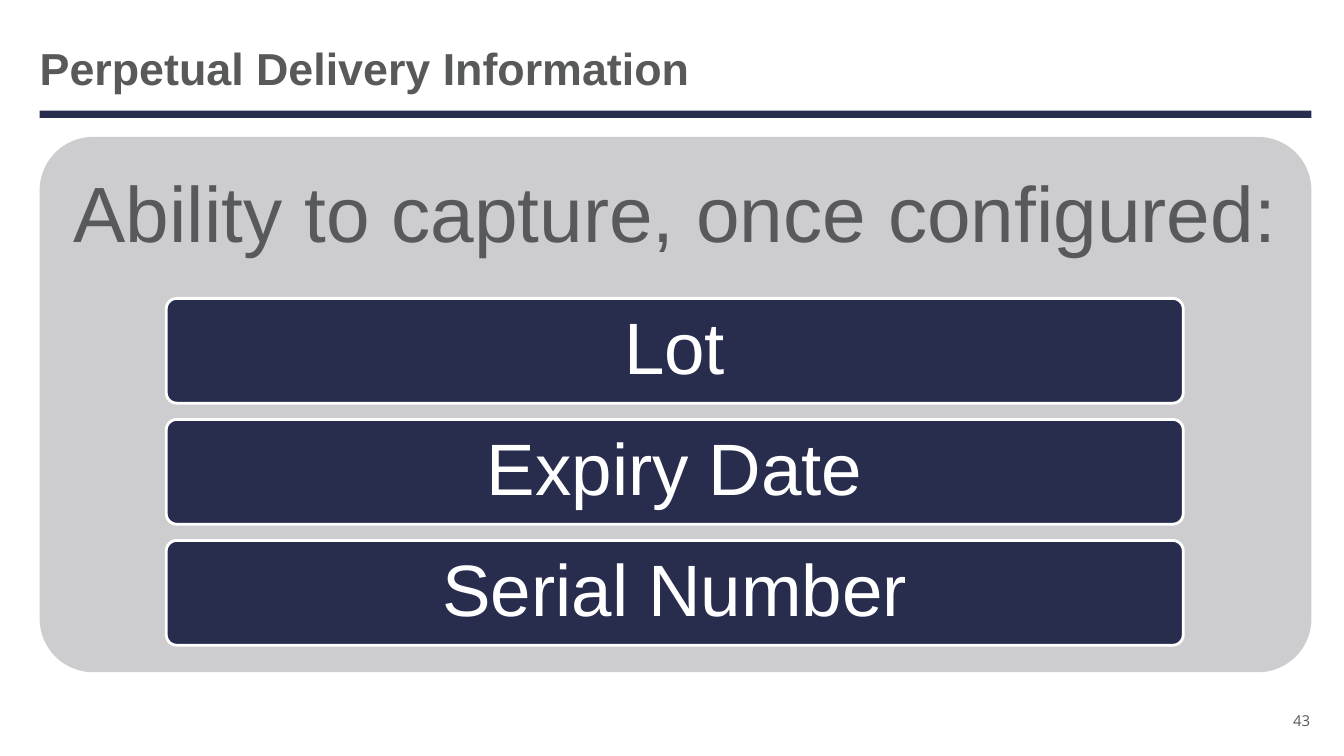
from pptx import Presentation
from pptx.dml.color import RGBColor
from pptx.enum.shapes import MSO_SHAPE
from pptx.enum.text import MSO_ANCHOR, MSO_AUTO_SIZE, PP_ALIGN
from pptx.util import Cm, Pt

RECTANGLE = MSO_SHAPE.RECTANGLE
ROUNDED = MSO_SHAPE.ROUNDED_RECTANGLE
MIDDLE = MSO_ANCHOR.MIDDLE
NO_AUTOFIT = MSO_AUTO_SIZE.NONE
LEFT, CENTER, RIGHT = PP_ALIGN.LEFT, PP_ALIGN.CENTER, PP_ALIGN.RIGHT

NAVY, GREY, PANEL, WHITE = "282D4E", "58595B", "CDCDD0", "FFFFFF"

# Shared left edge and width of the content, in centimetres
MARGIN, CONTENT_WIDTH = 1.0, 32.05

CAPTURED_FIELDS = ["Lot", "Expiry Date", "Serial Number"]
BAR_TOP, BAR_HEIGHT, BAR_PITCH = 7.52, 2.64, 3.05


def color(hex_string):
    return RGBColor.from_string(hex_string)


def write_text(shape, text, size, hex_string, alignment, font="Arial",
               bold=False, spacing=0.9, inset_x=0, inset_y=0):
    frame = shape.text_frame
    frame.word_wrap = True
    frame.auto_size = NO_AUTOFIT
    frame.vertical_anchor = MIDDLE
    frame.margin_left = frame.margin_right = Cm(inset_x)
    frame.margin_top = frame.margin_bottom = Cm(inset_y)
    paragraph = frame.paragraphs[0]
    paragraph.alignment = alignment
    paragraph.line_spacing = spacing
    run = paragraph.add_run()
    run.text = text
    run.font.name = font
    run.font.size = Pt(size)
    run.font.bold = bold
    run.font.color.rgb = color(hex_string)


def add_block(slide, kind, left, top, width, height, fill, outline=None):
    shape = slide.shapes.add_shape(kind, Cm(left), Cm(top), Cm(width), Cm(height))
    shape.shadow.inherit = False
    shape.fill.solid()
    shape.fill.fore_color.rgb = color(fill)
    if outline:
        shape.line.color.rgb = color(outline)
        shape.line.width = Pt(2)
    else:
        shape.line.fill.background()
    if kind == ROUNDED:
        shape.adjustments[0] = 0.1
    return shape


def add_label(slide, left, top, width, height, *text, **style):
    box = slide.shapes.add_textbox(Cm(left), Cm(top), Cm(width), Cm(height))
    write_text(box, *text, **style)


def set_title(slide, text):
    title = slide.shapes.title
    title.left, title.top = Cm(MARGIN), Cm(1.04)
    title.width, title.height = Cm(CONTENT_WIDTH), Cm(1.55)
    write_text(title, text, 32, GREY, LEFT, bold=True, spacing=0.85, inset_y=0.13)


def main():
    presentation = Presentation()
    presentation.slide_width, presentation.slide_height = Cm(33.87), Cm(19.05)
    slide = presentation.slides.add_slide(presentation.slide_layouts[5])

    # Title and rule
    set_title(slide, "Perpetual Delivery Information")
    add_block(slide, RECTANGLE, MARGIN, 2.79, CONTENT_WIDTH, 0.18, NAVY)

    # Panel with its heading
    add_block(slide, ROUNDED, MARGIN, 3.45, CONTENT_WIDTH, 13.49, PANEL)
    add_label(slide, MARGIN, 3.45, CONTENT_WIDTH, 4.04,
              "Ability to capture, once configured:", 56, GREY, CENTER,
              inset_x=0.58, inset_y=0.58)

    # One bar per captured field
    for index, field in enumerate(CAPTURED_FIELDS):
        bar = add_block(slide, ROUNDED, 4.19, BAR_TOP + index * BAR_PITCH,
                        25.63, BAR_HEIGHT, NAVY, WHITE)
        write_text(bar, field, 52, WHITE, CENTER, inset_x=0.43, inset_y=0.36)

    # Slide number
    add_label(slide, 31.75, 17.58, 1.27, 1.17, "43", 10.7, GREY, RIGHT,
              font="Open Sans", spacing=1.0)

    presentation.save("out.pptx")


if __name__ == "__main__":
    main()
